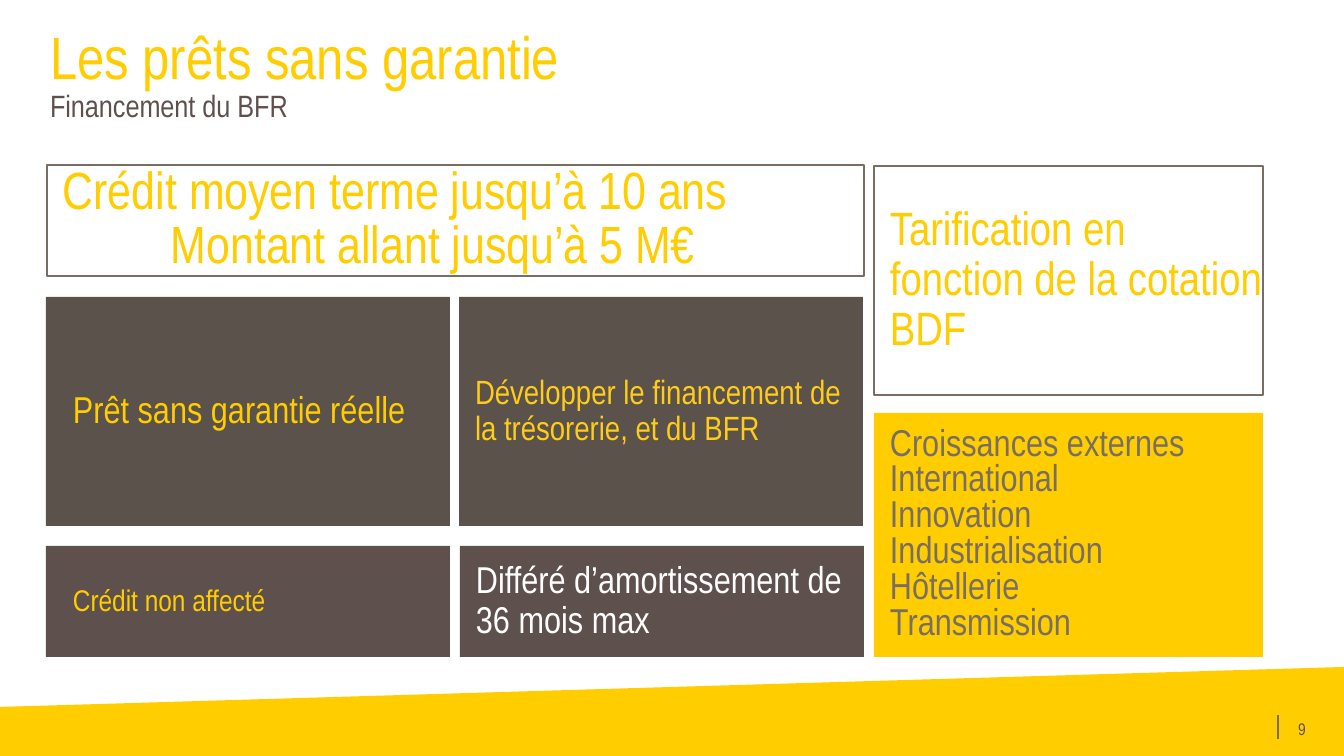
"""Build the slide on loans without collateral."""
from lxml import etree
from pptx import Presentation
from pptx.dml.color import RGBColor
from pptx.enum.shapes import MSO_CONNECTOR, MSO_SHAPE
from pptx.enum.text import MSO_ANCHOR, PP_ALIGN
from pptx.oxml.ns import qn
from pptx.util import Pt

RECT, TRIANGLE = MSO_SHAPE.RECTANGLE, MSO_SHAPE.RIGHT_TRIANGLE
STRAIGHT, MIDDLE, LEFT = MSO_CONNECTOR.STRAIGHT, MSO_ANCHOR.MIDDLE, PP_ALIGN.LEFT
FONT = "Arial Narrow"
YELLOW = RGBColor(0xFF, 0xCD, 0x00)
GOLD = RGBColor(0xFE, 0xCC, 0x1A)
BROWN = RGBColor(0x5A, 0x52, 0x4B)
MAROON = RGBColor(0x5E, 0x51, 0x4D)
GREY = RGBColor(0x78, 0x6E, 0x64)
WHITE = RGBColor(0xFF, 0xFF, 0xFF)
SCALE = 914400 / 134.4


def px(*values):
    return [round(v * SCALE) for v in values]


def add_block(kind, box, fill, line=None):
    sp = s.shapes.add_shape(kind, *px(*box))
    sp.shadow.inherit = False
    sp.fill.solid()
    sp.fill.fore_color.rgb = fill
    if line is None:
        sp.line.fill.background()
    else:
        sp.line.color.rgb = line
        sp.line.width = Pt(0.75)
    return sp


prs = Presentation()
prs.slide_width, prs.slide_height = px(1344, 756)
s = prs.slides.add_slide(prs.slide_layouts[6])

add_block(RECT, (0, 707, 1344, 49), YELLOW)
slope = add_block(TRIANGLE, (0, 667, 1344, 40), YELLOW)
slope._element.spPr.xfrm.set("flipH", "1")

rule = s.shapes.add_connector(STRAIGHT, *px(1278, 739, 1278, 715))
rule.line.color.rgb = GREY
rule.line.width = Pt(0.75)
etree.SubElement(rule._element.spPr, qn("a:effectLst"))

BLOCKS = [
    ((47, 165, 817, 111), WHITE, GREY, 16, 28, YELLOW, 0.85,
     ["Crédit moyen terme jusqu’à 10 ans", "Montant allant jusqu’à 5 M€"]),
    ((46, 297, 404, 229), BROWN, None, 27, 20, YELLOW, 0.9,
     ["Prêt sans garantie réelle"]),
    ((46, 546, 404, 111), MAROON, None, 27, 16, YELLOW, 0.9,
     ["Crédit non affecté"]),
    ((460, 546, 404, 111), MAROON, None, 16, 20, WHITE, 0.9,
     ["Différé d’amortissement de 36 mois max"]),
    ((459, 297, 404, 229), BROWN, None, 16, 18, GOLD, 0.9,
     ["Développer le financement de la trésorerie, et du BFR"]),
    ((874, 166, 389, 229), WHITE, GREY, 16, 25, YELLOW, 0.9,
     ["Tarification en fonction de la cotation BDF"]),
    ((874, 413, 389, 244), YELLOW, None, 16, 20, GREY, 0.8,
     ["Croissances externes", "International", "Innovation",
      "Industrialisation", "Hôtellerie", "Transmission"]),
]
for box, fill, line, inset, size, color, spacing, texts in BLOCKS:
    tf = add_block(RECT, box, fill, line).text_frame
    tf.word_wrap = True
    tf.vertical_anchor = MIDDLE
    tf.margin_left = px(inset)[0]
    tf.margin_top = tf.margin_right = tf.margin_bottom = 0
    tf.text = "\n".join(texts)
    for p in tf.paragraphs:
        p.alignment = LEFT
        p.line_spacing = spacing
        p.font.name = FONT
        p.font.size = Pt(size)
        p.font.color.rgb = color
        if p.text.startswith("Montant"):
            p._p.get_or_add_pPr().set("marL", str(px(108)[0]))

tf = s.shapes.add_textbox(*px(50, 31, 933, 93)).text_frame
tf.word_wrap = True
tf.margin_left = tf.margin_top = tf.margin_right = tf.margin_bottom = 0
p = tf.paragraphs[0]
p.line_spacing = 0.85
p.font.name = FONT
for text, size, color in [("Les prêts sans garantie", 32, YELLOW),
                          ("Financement du BFR", 16.5, MAROON)]:
    if p.runs:
        p.add_line_break()
    r = p.add_run()
    r.text = text
    r.font.size = Pt(size)
    r.font.color.rgb = color

tf = s.shapes.add_textbox(*px(1285, 712, 59, 35)).text_frame
tf.word_wrap = True
p = tf.paragraphs[0]
p.text = "9"
p.font.name = FONT
p.font.size = Pt(9)
p.font.color.rgb = MAROON

prs.save("out.pptx")
